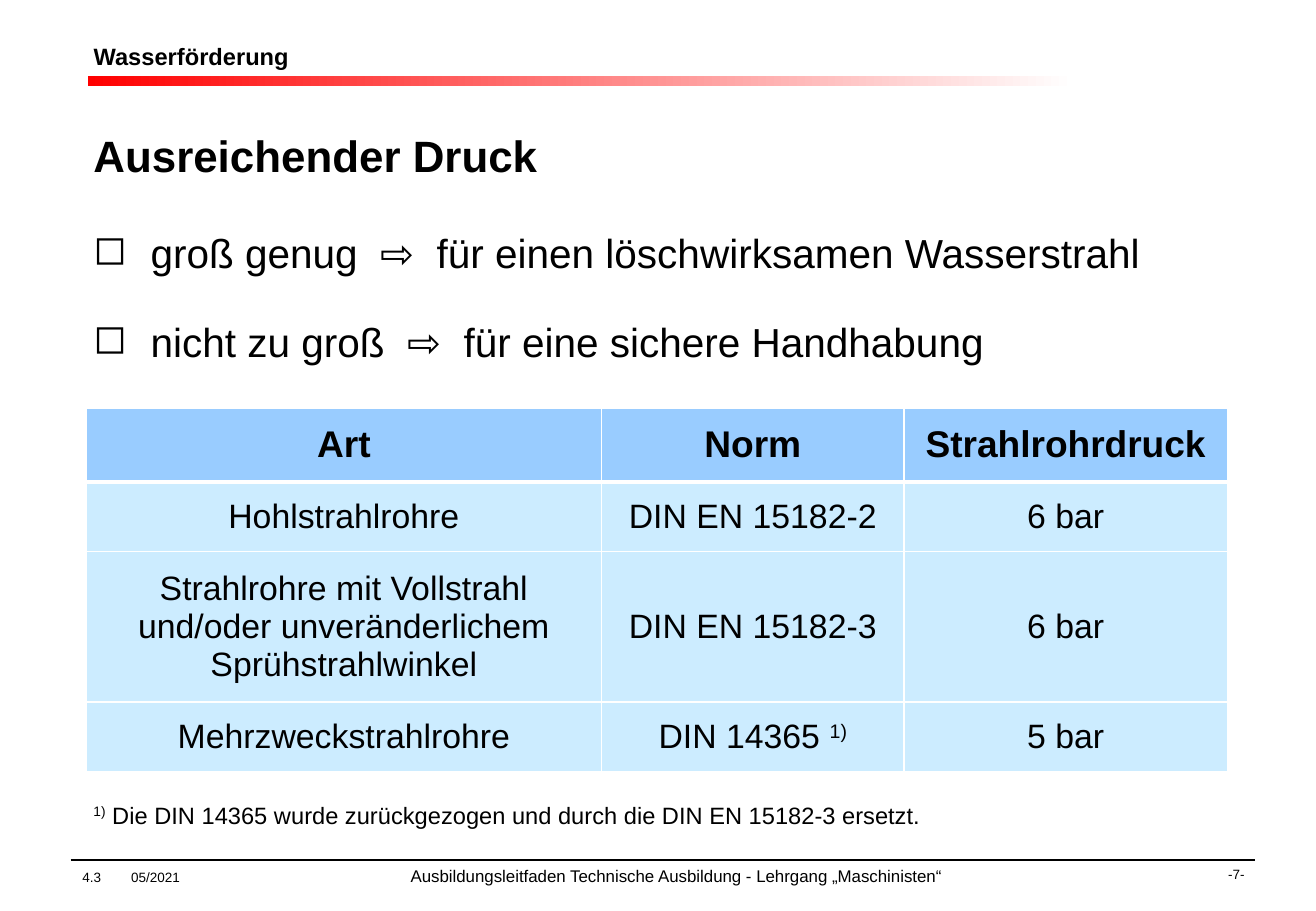
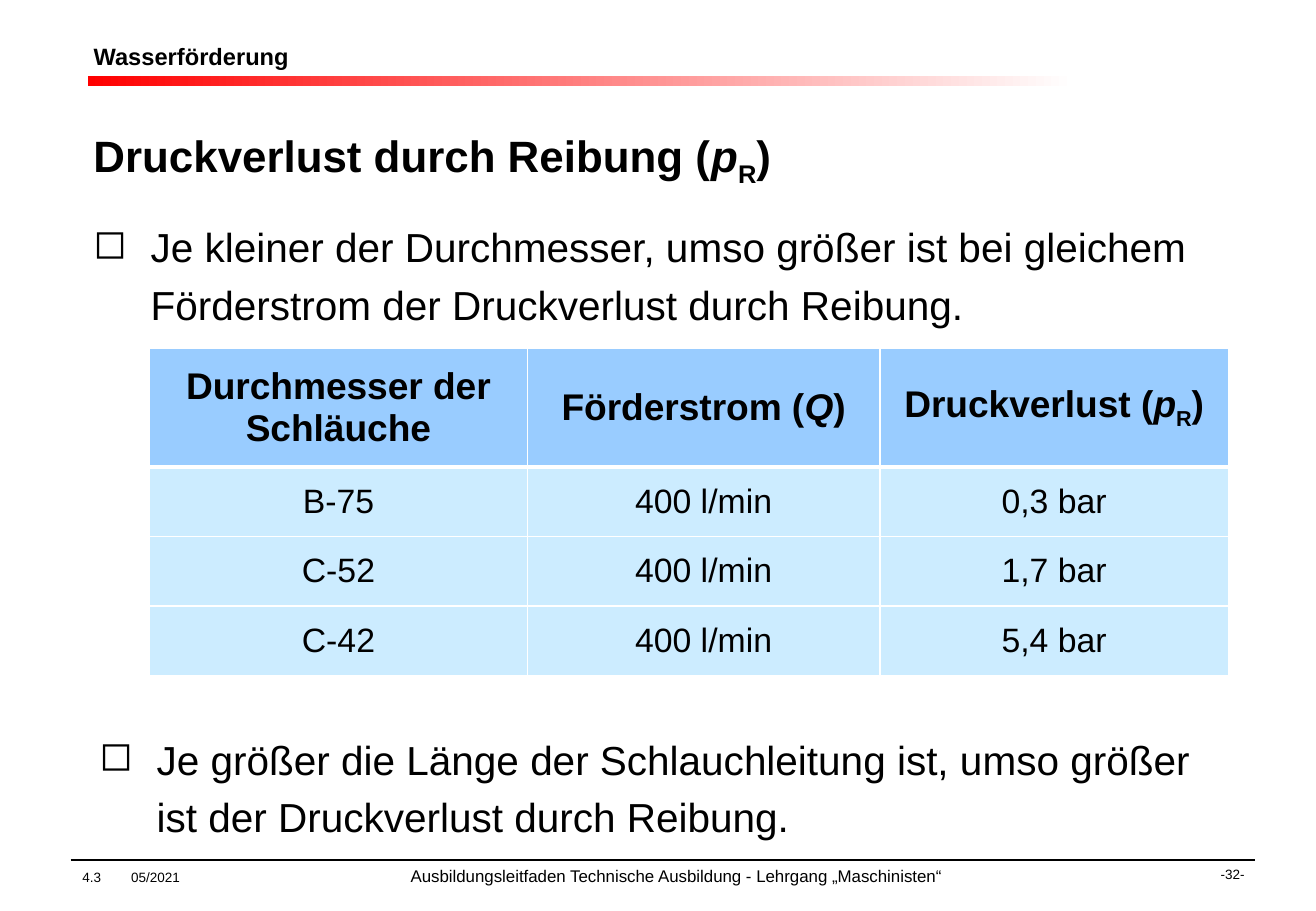
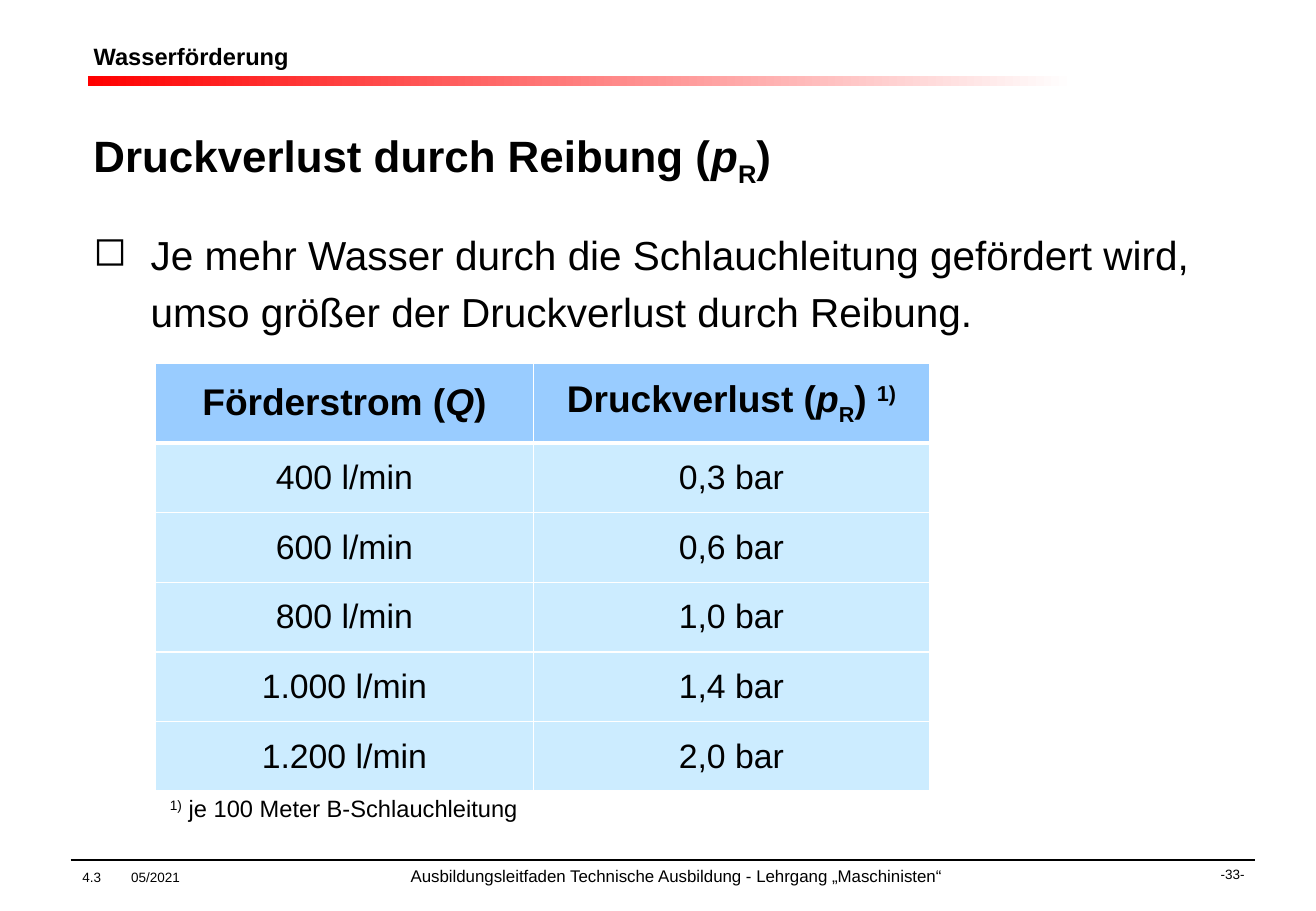
from dataclasses import dataclass
from typing import NamedTuple

from lxml.etree import SubElement
from pptx import Presentation
from pptx.dml.color import RGBColor
from pptx.enum.shapes import MSO_CONNECTOR, MSO_SHAPE
from pptx.enum.text import MSO_ANCHOR, PP_ALIGN
from pptx.oxml.ns import qn
from pptx.util import Emu, Inches, Pt

WIDE, HIGH = Inches(10.83), Inches(7.5)
FONT = "Arial"
BLACK = RGBColor(0x00, 0x00, 0x00)
WHITE = RGBColor(0xFF, 0xFF, 0xFF)
RED = RGBColor(0xFF, 0x00, 0x00)
BLUE = RGBColor(0x99, 0xCC, 0xFF)
PALE = RGBColor(0xCC, 0xEC, 0xFF)
LEFT, BODY = 6.19, 86.61  # text margin and width, percent of the slide width
ROW = 7.3  # one-line table row, percent of the slide height


class Run(NamedTuple):
    text: str
    italic: bool = False
    base: int = 0  # percent, above or below the baseline
    size: float = 0  # 0 takes the size of the paragraph


class Box(NamedTuple):
    """Percent of the slide's width and height."""
    left: float
    top: float
    wide: float
    high: float


Runs = tuple[Run, ...]
LOSS: Runs = (Run("p", True), Run("R", base=-25))
NOTE = Run("1)", base=30)
FLOW: Runs = (Run("Förderstrom ("), Run("Q", True), Run(")"))


@dataclass
class Grid:
    left: float
    top: float
    cols: tuple[float, ...]
    rows: tuple[float, ...]
    cells: list[tuple]


@dataclass
class Bullet:
    box: Box
    lines: tuple[str, ...]
    pitch: float = 34  # 0 keeps single spacing


@dataclass
class Page:
    number: int
    head: Runs
    grid: Grid
    bullets: list[Bullet]
    note: tuple[Box, str] | None = None


def across(share: float) -> Emu:
    return Emu(round(WIDE * share / 100))


def down(share: float) -> Emu:
    return Emu(round(HIGH * share / 100))


def place(box: Box) -> tuple[Emu, Emu, Emu, Emu]:
    return across(box.left), down(box.top), across(box.wide), down(box.high)


def write(para, runs: Runs, size: float, bold: bool = False) -> None:
    for part in runs:
        run = para.add_run()
        run.text = part.text
        font = run.font
        font.name, font.size, font.bold = FONT, Pt(part.size or size), bold
        font.italic = part.italic
        font.color.rgb = BLACK
        if part.base:
            run._r.get_or_add_rPr().set("baseline", str(part.base * 1000))


def label(slide, box: Box, runs: Runs, size: float, bold: bool = False):
    frame = slide.shapes.add_textbox(*place(box)).text_frame
    frame.word_wrap = True
    para = frame.paragraphs[0]
    write(para, runs, size, bold)
    return para


def list_box(slide, item: Bullet) -> None:
    frame = slide.shapes.add_textbox(*place(item.box)).text_frame
    frame.word_wrap = True
    for i, line in enumerate(item.lines):
        para = frame.add_paragraph() if i else frame.paragraphs[0]
        para.space_after = Pt(24)
        if item.pitch:
            para.line_spacing = Pt(item.pitch)
        props = para._p.get_or_add_pPr()
        props.set("marL", str(Inches(0.47)))
        props.set("indent", str(-Inches(0.47)))
        SubElement(props, qn("a:buChar")).set("char", "◻")
        write(para, (Run(line),), 24)


def edge(cell, side: str, width: float) -> None:
    line = SubElement(cell._tc.get_or_add_tcPr(), qn(f"a:ln{side}"))
    line.set("w", str(Pt(width)))
    fill = SubElement(line, qn("a:solidFill"))
    SubElement(fill, qn("a:srgbClr")).set("val", str(WHITE))


def draw_grid(slide, grid: Grid) -> None:
    box = Box(grid.left, grid.top, sum(grid.cols), sum(grid.rows))
    table = slide.shapes.add_table(
        len(grid.rows), len(grid.cols), *place(box)).table
    for col, wide in zip(table.columns, grid.cols):
        col.width = across(wide)
    for r, (row, high) in enumerate(zip(table.rows, grid.rows)):
        row.height = down(high)
        for cell, text in zip(row.cells, grid.cells[r]):
            cell.margin_top = cell.margin_bottom = Inches(0.12)
            cell.vertical_anchor = MSO_ANCHOR.MIDDLE
            # A thick rule parts the header from the body
            for side in "LRTB":
                thick = (r, side) in ((0, "B"), (1, "T"))
                edge(cell, side, 3 if thick else 1)
            cell.fill.solid()
            cell.fill.fore_color.rgb = PALE if r else BLUE
            para = cell.text_frame.paragraphs[0]
            para.alignment = PP_ALIGN.CENTER
            runs = (Run(text),) if isinstance(text, str) else text
            write(para, runs, 20 if r else 22, not r)


def draw_frame(slide, number: int) -> None:
    # Title and red band
    title = slide.shapes.title
    title.left, title.top, title.width, title.height = place(
        Box(LEFT, 3.33, 48.48, 5.6))
    title.text_frame.vertical_anchor = MSO_ANCHOR.MIDDLE
    para = title.text_frame.paragraphs[0]
    para.alignment = PP_ALIGN.LEFT
    write(para, (Run("Wasserförderung"),), 14, True)
    band = slide.shapes.add_shape(
        MSO_SHAPE.RECTANGLE, *place(Box(6.65, 8.4, 75, 1.07)))
    band.shadow.inherit = False
    band.line.fill.background()
    band.fill.gradient()
    band.fill.gradient_angle = 0
    for stop, tint in zip(band.fill.gradient_stops, (RED, WHITE)):
        stop.color.rgb = tint

    # Footer rule, text and page number
    rule = slide.shapes.add_connector(
        MSO_CONNECTOR.STRAIGHT, across(5.36), down(94.4),
        across(95.38), down(94.4))
    rule.line.color.rgb = BLACK
    rule.line.width = Pt(0.75)
    SubElement(rule._element.spPr, qn("a:effectLst"))
    page = label(slide, Box(74.61, 94.4, 20.87, 2.93), (Run(f"-{number}-"),), 8)
    page.alignment = PP_ALIGN.RIGHT
    foot = label(slide, Box(5.36, 94.4, 67.4, 3.2), (
        Run("4.3\t05/2021\t"),
        Run("Ausbildungsleitfaden Technische Ausbildung - "
            "Lehrgang „Maschinisten“", size=10)), 8)
    tabs = SubElement(foot._p.get_or_add_pPr(), qn("a:tabLst"))
    for stop in (0.4, 2.7):
        tab = SubElement(tabs, qn("a:tab"))
        tab.set("pos", str(Inches(stop)))
        tab.set("algn", "l")


def draw(deck, page: Page) -> None:
    slide = deck.slides.add_slide(deck.slide_layouts[5])
    draw_frame(slide, page.number)
    label(slide, Box(LEFT, 13.47, 87.53, 7.47), page.head, 26, True)
    draw_grid(slide, page.grid)
    for item in page.bullets:
        list_box(slide, item)
    if page.note:
        box, text = page.note
        label(slide, box, (NOTE, Run(text)), 14)


LOSS_HEAD: Runs = (Run("Druckverlust durch Reibung ("), *LOSS, Run(")"))

PAGES = [
    Page(
        7, (Run("Ausreichender Druck"),),
        Grid(6.56, 44.8, (39.15, 22.99, 24.56), (7.6, ROW, 15.47, ROW), [
            ("Art", "Norm", "Strahlrohrdruck"),
            ("Hohlstrahlrohre", "DIN EN 15182-2", "6 bar"),
            ("Strahlrohre mit Vollstrahl und/oder unveränderlichem "
             "Sprühstrahlwinkel", "DIN EN 15182-3", "6 bar"),
            ("Mehrzweckstrahlrohre", (Run("DIN 14365 "), NOTE), "5 bar"),
        ]),
        [Bullet(Box(LEFT, 24.4, BODY, 16.67), (
            "groß genug  ⇨  für einen löschwirksamen Wasserstrahl",
            "nicht zu groß  ⇨  für eine sichere Handhabung"), 0)],
        (Box(LEFT, 87.2, 86, 4.53),
         " Die DIN 14365 wurde zurückgezogen und durch die "
         "DIN EN 15182-3 ersetzt."),
    ),
    Page(
        32, LOSS_HEAD,
        Grid(11.36, 38.27, (28.72, 26.78, 26.5), (12.13, *[ROW] * 3), [
            ("Durchmesser der Schläuche", FLOW,
             (Run("Druckverlust ("), *LOSS, Run(")"))),
            ("B-75", "400 l/min", "0,3 bar"),
            ("C-52", "400 l/min", "1,7 bar"),
            ("C-42", "400 l/min", "5,4 bar"),
        ]),
        [Bullet(Box(LEFT, 22.8, BODY, 13.47), (
            "Je kleiner der Durchmesser, umso größer ist bei gleichem "
            "Förderstrom der Druckverlust durch Reibung.",)),
         Bullet(Box(6.65, 79.07, BODY, 13.47), (
             "Je größer die Länge der Schlauchleitung ist, umso größer "
             "ist der Druckverlust durch Reibung.",))],
    ),
    Page(
        33, LOSS_HEAD,
        Grid(11.82, 39.87, (28.72, 30.1), (8.27, *[ROW] * 5), [
            (FLOW, (Run("Druckverlust ("), *LOSS, Run(") "), NOTE)),
            ("400 l/min", "0,3 bar"),
            ("600 l/min", "0,6 bar"),
            ("800 l/min", "1,0 bar"),
            ("1.000 l/min", "1,4 bar"),
            ("1.200 l/min", "2,0 bar"),
        ]),
        [Bullet(Box(LEFT, 23.6, BODY, 13.47), (
            "Je mehr Wasser durch die Schlauchleitung gefördert wird, "
            "umso größer der Druckverlust durch Reibung.",))],
        (Box(12, 86.53, 55.4, 4.53), " je 100 Meter B-Schlauchleitung"),
    ),
]


def main() -> None:
    deck = Presentation()
    deck.slide_width, deck.slide_height = WIDE, HIGH
    for page in PAGES:
        draw(deck, page)
    deck.save("out.pptx")


if __name__ == "__main__":
    main()
